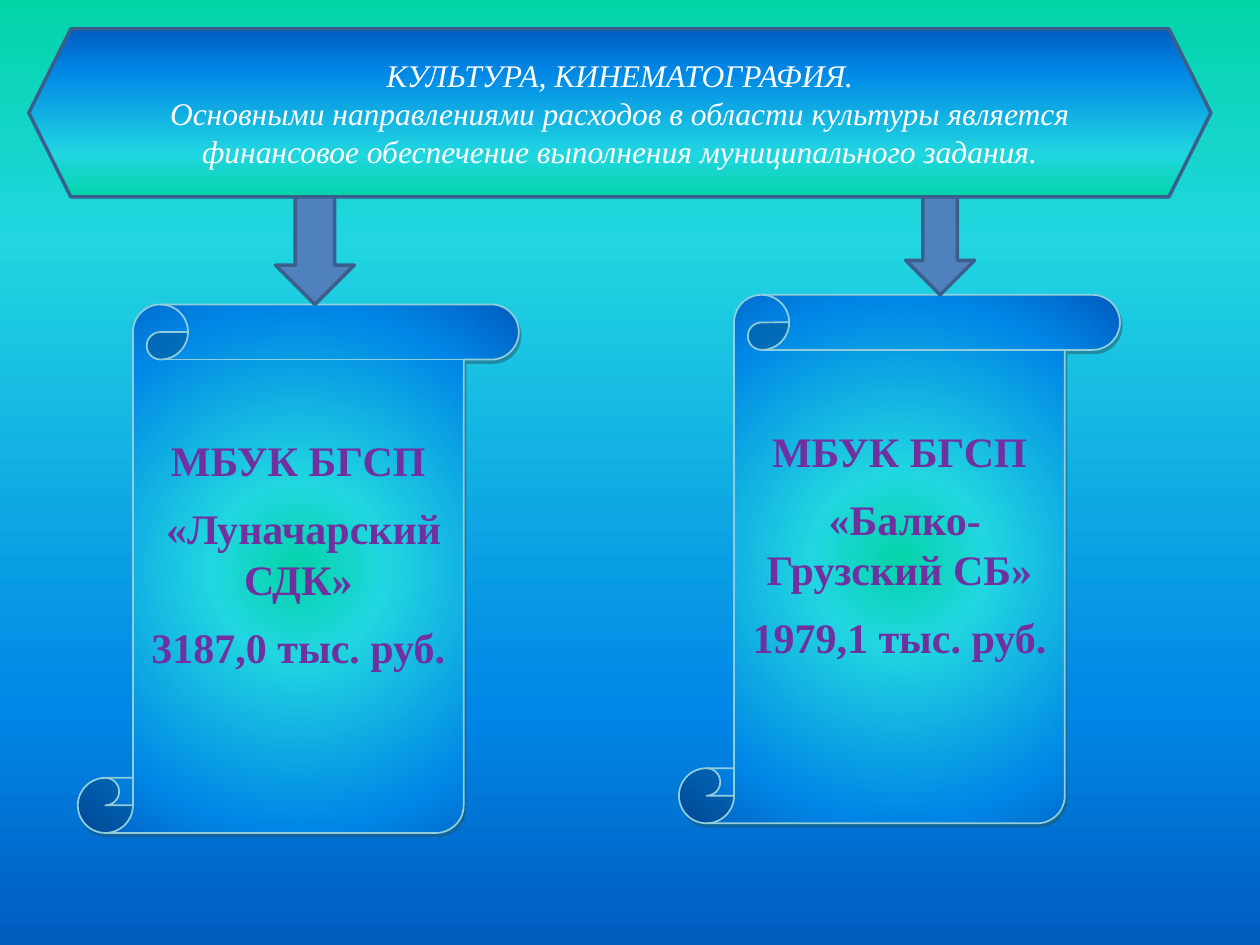
from lxml.etree import SubElement
from pptx import Presentation
from pptx.dml.color import RGBColor
from pptx.enum.shapes import MSO_SHAPE
from pptx.enum.text import MSO_ANCHOR, PP_ALIGN
from pptx.oxml.ns import qn
from pptx.util import Pt

STOPS = [(0, "03D4A8"), (25, "21D6E0"), (75, "0087E6"), (100, "005CBF")]
FONT = "Times New Roman"
BANNER_BOTTOM = 112.5
SCROLLS = [
    (44.5, 174, 157.5, 45, ["МБУК БГСП", " «Луначарский СДК»", "3187,0 тыс. руб."]),
    (388, 168.5, 517.5, 39.5, ["МБУК БГСП", " «Балко-Грузский СБ»", "1979,1 тыс. руб."]),
]


def color(value):
    return RGBColor.from_string(value)


def add_node(parent, tag, **attributes):
    return SubElement(parent, qn(tag), {key: str(value) for key, value in attributes.items()})


def set_gradient(fill, owner, angle=None):
    fill.gradient()
    gradient = next(owner.iter(qn("a:gradFill")))
    for child in list(gradient):
        gradient.remove(child)
    stops = add_node(gradient, "a:gsLst")
    for position, value in STOPS:
        stop = add_node(stops, "a:gs", pos=position * 1000)
        add_node(stop, "a:srgbClr", val=value)
    if angle is None:
        radial = add_node(gradient, "a:path", path="circle")
        add_node(radial, "a:fillToRect", l=50000, t=50000, r=50000, b=50000)
    else:
        add_node(gradient, "a:lin", ang=angle * 60000, scaled=0)


def add_figure(page, kind, left, top, width, height, line, line_width):
    shape = page.shapes.add_shape(kind, Pt(left), Pt(top), Pt(width), Pt(height))
    shape.shadow.inherit = False
    shape.line.color.rgb = color(line)
    shape.line.width = Pt(line_width)
    return shape


def add_shadow(shape):
    effects = shape.element.spPr.find(qn("a:effectLst"))
    shadow = add_node(effects, "a:outerShdw", blurRad=0, dist=Pt(2.2), dir=63 * 60000,
                      algn="ctr", rotWithShape=0)
    shade = add_node(shadow, "a:srgbClr", val="205867")
    add_node(shade, "a:alpha", val=50000)


def write_text(shape, lines, size, value, bold=False, italic=False, space_after=0):
    frame = shape.text_frame
    frame.word_wrap = True
    for index, line in enumerate(lines):
        para = frame.add_paragraph() if index else frame.paragraphs[0]
        para.text = line
        para.alignment = PP_ALIGN.CENTER
        para.space_after = Pt(space_after)
        font = para.font
        font.name, font.size, font.bold, font.italic = FONT, Pt(size), bold, italic
        font.color.rgb = color(value)


def add_banner(page):
    banner = add_figure(page, MSO_SHAPE.HEXAGON, 16.5, 16.5, 675.5, BANNER_BOTTOM - 16.5,
                        "3A5F8C", 2)
    set_gradient(banner.fill, banner.element.spPr, 270)
    banner.text_frame.vertical_anchor = MSO_ANCHOR.MIDDLE
    write_text(banner, [
        "КУЛЬТУРА, КИНЕМАТОГРАФИЯ.",
        "Основными направлениями расходов в области культуры является "
        "финансовое обеспечение выполнения муниципального задания.",
    ], 18, "FFFFFF", italic=True)


def add_scroll(page, left, top, lines):
    scroll = add_figure(page, MSO_SHAPE.VERTICAL_SCROLL, left, top, 252, 302, "92CDDC", 1)
    set_gradient(scroll.fill, scroll.element.spPr)
    add_shadow(scroll)
    scroll.text_frame.vertical_anchor = MSO_ANCHOR.TOP
    scroll.text_frame.margin_top = Pt(43)
    write_text(scroll, lines, 24, "7030A0", bold=True, space_after=10)


def add_arrow(page, left, width, bottom):
    arrow = add_figure(page, MSO_SHAPE.DOWN_ARROW, left, BANNER_BOTTOM, width,
                       bottom - BANNER_BOTTOM, "3A5F8C", 2)
    arrow.fill.solid()
    arrow.fill.fore_color.rgb = color("4F81BD")


def main():
    deck = Presentation()
    deck.slide_width, deck.slide_height = Pt(720), Pt(540)
    page = deck.slides.add_slide(deck.slide_layouts[6])
    set_gradient(page.background.fill, page.element, 90)
    add_banner(page)
    for left, top, arrow_left, arrow_width, lines in SCROLLS:
        add_scroll(page, left, top, lines)
        add_arrow(page, arrow_left, arrow_width, top)
    deck.save("out.pptx")


if __name__ == "__main__":
    main()
